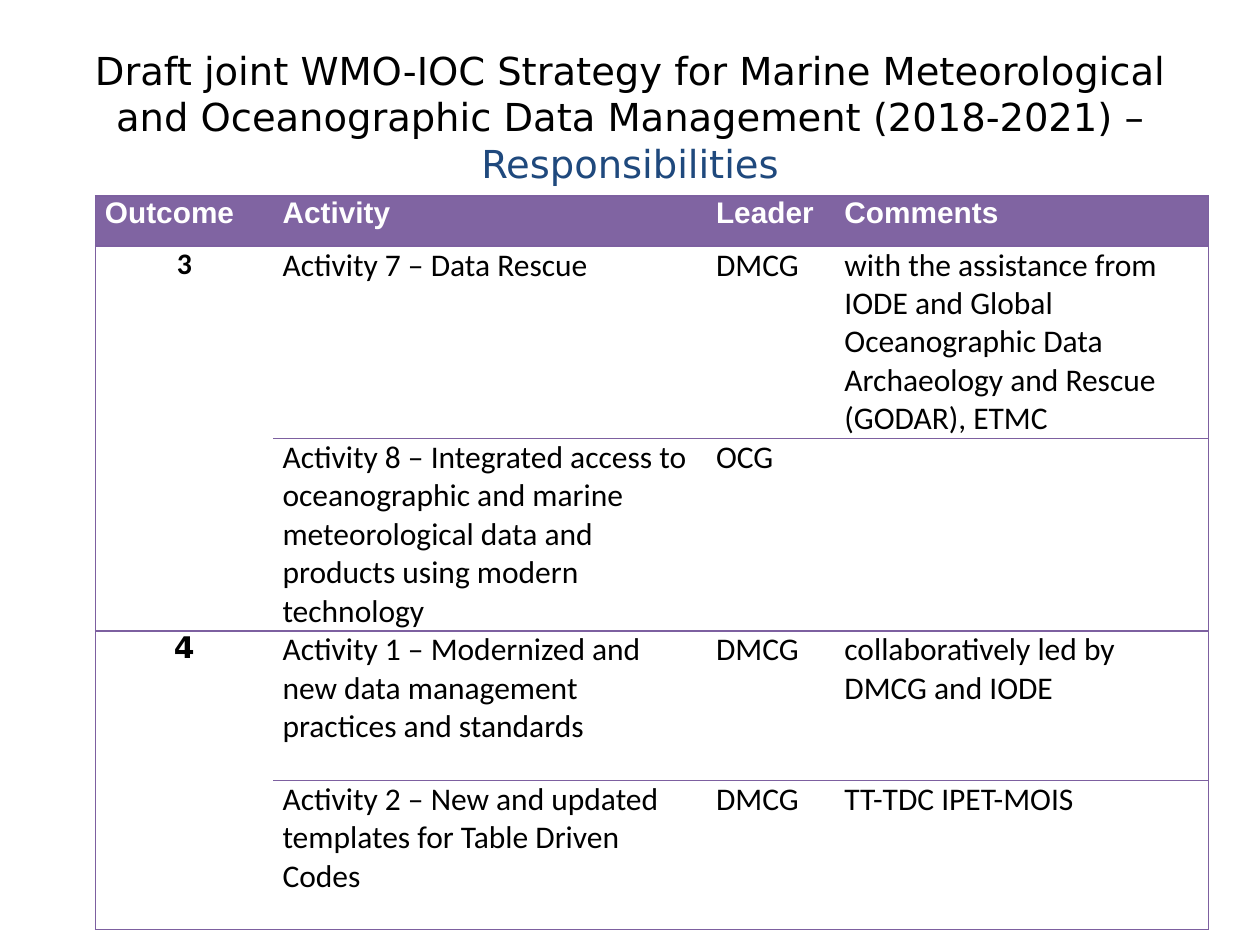
from dataclasses import dataclass

from lxml.etree import SubElement
from pptx import Presentation
from pptx.dml.color import RGBColor
from pptx.enum.text import MSO_ANCHOR, MSO_AUTO_SIZE, PP_ALIGN
from pptx.oxml.ns import qn
from pptx.util import Pt


@dataclass(frozen=True)
class Theme:
    """Colours, fonts and type sizes of the slide."""
    black: str = "000000"
    white: str = "FFFFFF"
    accent: str = "1F497D"
    header: str = "8064A2"
    border: str = "7D60A0"
    display: str = "DejaVu Sans"
    heading: str = "Arial"
    body: str = "Calibri"
    title_size: float = 22
    label_size: float = 17
    body_size: float = 18
    border_width: float = 0.75


class SlideBuilder:
    """Hold the theme and the slide, and add each kind of element."""

    def __init__(self, slide, theme):
        """Keep the slide and its theme."""
        self.slide = slide
        self.theme = theme

    def add_run(self, paragraph, text, name, size, color, bold=False):
        """Add one formatted run to a paragraph."""
        run = paragraph.add_run()
        run.text = text
        for key, value in {"name": name, "size": Pt(size), "bold": bold}.items():
            setattr(run.font, key, value)
        run.font.color.rgb = RGBColor.from_string(color)

    def add_title(self, box, parts):
        """Place the title and fill it with coloured parts."""
        title = self.slide.shapes.title
        for key, value in zip(("left", "top", "width", "height"), box):
            setattr(title, key, Pt(value))
        frame_format = {
            "word_wrap": True,
            "auto_size": MSO_AUTO_SIZE.NONE,
            "vertical_anchor": MSO_ANCHOR.MIDDLE,
        }
        for key, value in frame_format.items():
            setattr(title.text_frame, key, value)
        paragraph = title.text_frame.paragraphs[0]
        paragraph.alignment = PP_ALIGN.CENTER
        for text, color in parts:
            self.add_run(paragraph, text, self.theme.display, self.theme.title_size, color)

    def set_borders(self, cell, sides):
        """Draw the named sides of a cell and clear the others."""
        properties = cell._tc.get_or_add_tcPr()
        for index, side in enumerate("LRTB"):
            line = SubElement(properties, qn(f"a:ln{side}"))
            properties.insert(index, line)
            if side in sides:
                line.set("w", str(Pt(self.theme.border_width)))
                fill = SubElement(line, qn("a:solidFill"))
                SubElement(fill, qn("a:srgbClr")).set("val", self.theme.border)
            else:
                SubElement(line, qn("a:noFill"))

    def add_cell(self, cell, text, font, centered=False, fill=None):
        """Format one cell and write its text."""
        cell_format = {
            "margin_left": Pt(5.4),
            "margin_right": Pt(5.4),
            "margin_top": 0,
            "margin_bottom": 0,
            "vertical_anchor": MSO_ANCHOR.TOP,
        }
        for key, value in cell_format.items():
            setattr(cell, key, value)
        if fill:
            cell.fill.solid()
            cell.fill.fore_color.rgb = RGBColor.from_string(fill)
        else:
            cell.fill.background()
        paragraph = cell.text_frame.paragraphs[0]
        paragraph.alignment = PP_ALIGN.CENTER if centered else PP_ALIGN.LEFT
        if text:
            self.add_run(paragraph, text, *font)

    def add_table(self, left, top, widths, heights, header, groups):
        """Add a table whose first column merges over each group of rows."""
        theme = self.theme
        table = self.slide.shapes.add_table(
            len(heights), len(widths), Pt(left), Pt(top), Pt(sum(widths)), Pt(sum(heights))
        ).table
        table.horz_banding = False
        for column, width in zip(table.columns, widths):
            column.width = Pt(width)
        for row, height in zip(table.rows, heights):
            row.height = Pt(height)
        header_font = (theme.heading, theme.label_size, theme.white, True)
        body_font = (theme.body, theme.body_size, theme.black)
        for column, text in enumerate(header):
            self.add_cell(table.cell(0, column), text, header_font, fill=theme.header)
        row = 1
        for outcome, font_name, activities in groups:
            label_font = (font_name, theme.label_size, theme.black, True)
            for offset, activity in enumerate(activities):
                label = "" if offset else outcome
                self.add_cell(table.cell(row + offset, 0), label, label_font, centered=True)
                for column, text in enumerate(activity, 1):
                    self.add_cell(table.cell(row + offset, column), text, body_font)
            last = row + len(activities) - 1
            table.cell(row, 0).merge(table.cell(last, 0))
            row = last + 1
        final = len(widths) - 1
        for row in range(len(heights)):
            for column in range(len(widths)):
                sides = "TB" + "L" * (column == 0) + "R" * (column == final)
                self.set_borders(table.cell(row, column), sides)


def main():
    """Build the responsibilities slide."""
    theme = Theme()
    presentation = Presentation()
    presentation.slide_width, presentation.slide_height = Pt(720), Pt(540)
    slide = presentation.slides.add_slide(presentation.slide_layouts[5])
    builder = SlideBuilder(slide, theme)
    builder.add_title((36, 21.6, 648, 90), [
        ("Draft joint WMO-IOC Strategy for Marine Meteorological and Oceanographic "
         "Data Management (2018-2021) – ", theme.black),
        ("Responsibilities", theme.accent),
    ])
    groups = [
        ("3", theme.body, [
            ("Activity 7 – Data Rescue", "DMCG",
             "with the assistance from IODE and Global Oceanographic Data "
             "Archaeology and Rescue (GODAR), ETMC"),
            ("Activity 8 – Integrated access to oceanographic and marine "
             "meteorological data and products using modern technology", "OCG", ""),
        ]),
        ("4", theme.display, [
            ("Activity 1 – Modernized and new data management practices and standards",
             "DMCG", "collaboratively led by DMCG and IODE"),
            ("Activity 2 – New and updated templates for Table Driven Codes",
             "DMCG", "TT-TDC IPET-MOIS"),
        ]),
    ]
    builder.add_table(
        54.6, 112, (101.5, 247.7, 73.4, 213.4), (28.6, 110, 110, 85.4, 85.4),
        ("Outcome", "Activity", "Leader", "Comments"), groups,
    )
    presentation.save("out.pptx")


if __name__ == "__main__":
    main()
